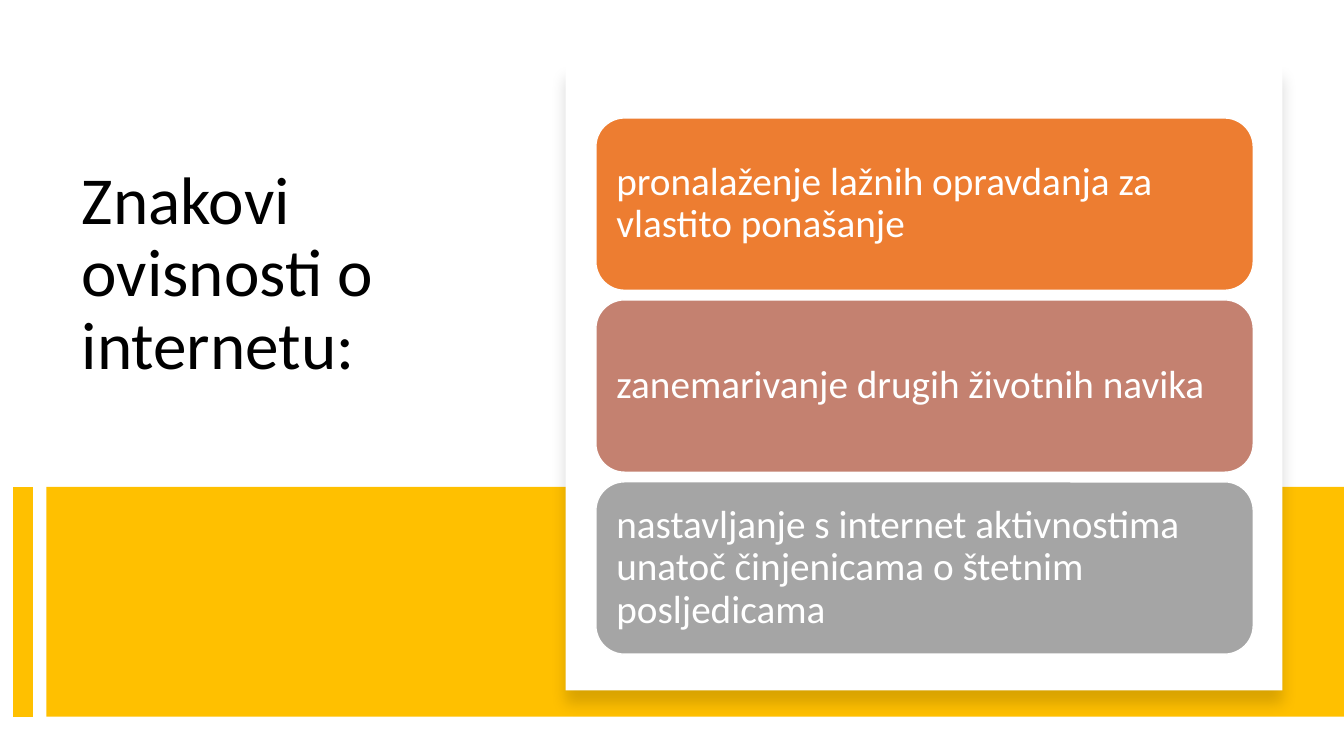
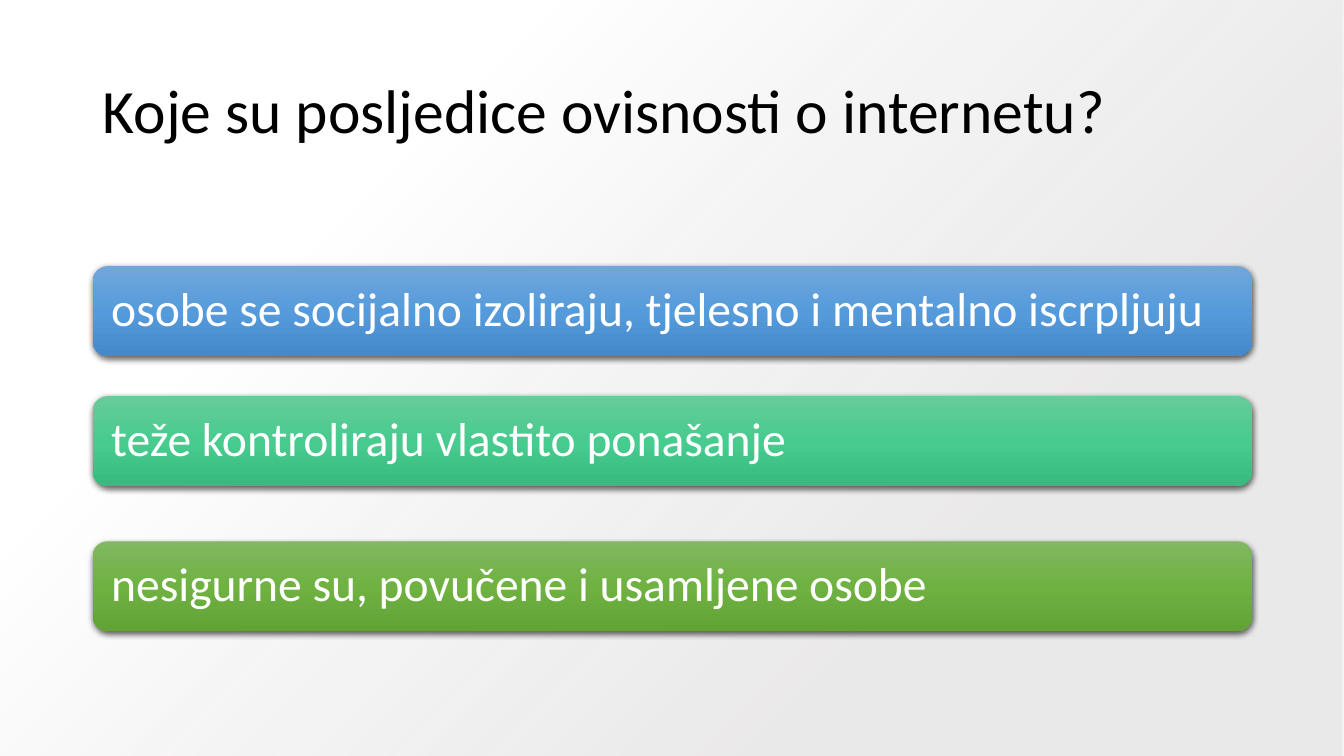
from dataclasses import dataclass

from pptx import Presentation
from pptx import util as u
from pptx.dml.color import RGBColor
from pptx.enum import shapes, text
from pptx.oxml import parse_xml
from pptx.oxml.ns import nsdecls, qn


@dataclass(frozen=True)
class Theme:
    font: str = "Calibri"
    ink: str = "000000"
    white: str = "FFFFFF"
    gold: str = "FFC000"
    mist: str = "E7E6E6"
    tiles: tuple = ("ED7D31", "C48170", "A5A5A5")
    bars: tuple = (
        ("71A6DB", "559BDB", "448ACA"),
        ("67CC9A", "47CB8E", "39BB7F"),
        ("81B861", "6FB242", "62A336"),
    )
    head: int = 48
    title: int = 44
    tile: int = 28
    bar: int = 34


T = Theme()
LEFT, TOP, WIDE, HIGH = 0.92, 2.64, 11.5, 0.89
BOX, ROUND = shapes.MSO_SHAPE.RECTANGLE, shapes.MSO_SHAPE.ROUNDED_RECTANGLE
MID = text.MSO_ANCHOR.MIDDLE


def rgb(code):
    return RGBColor.from_string(code)


def inches(spot):
    return [u.Inches(v) for v in spot]


def write(shape, words, size, color=T.white, inset=(0.1, 0.05), anchor=MID):
    frame = shape.text_frame
    frame.word_wrap = True
    frame.auto_size = text.MSO_AUTO_SIZE.NONE
    frame.vertical_anchor = anchor
    frame.margin_left = frame.margin_right = u.Inches(inset[0])
    frame.margin_top = frame.margin_bottom = u.Inches(inset[1])
    para = frame.paragraphs[0]
    para.alignment = text.PP_ALIGN.LEFT
    para.line_spacing = 0.9
    run = para.add_run()
    run.text = words
    run.font.name = T.font
    run.font.size = u.Pt(size)
    run.font.color.rgb = rgb(color)


def title(slide, words, spot, size, anchor=MID):
    shape = slide.shapes.title
    shape.left, shape.top, shape.width, shape.height = inches(spot)
    write(shape, words, size, color=T.ink, anchor=anchor)


def block(slide, kind, spot, fill, edge=None):
    shape = slide.shapes.add_shape(kind, *inches(spot))
    shape.shadow.inherit = False
    shape.fill.solid()
    shape.fill.fore_color.rgb = rgb(fill)
    if edge:
        shape.line.color.rgb = rgb(edge)
        shape.line.width = u.Pt(1)
    else:
        shape.line.fill.background()
    return shape


def blend(shape, stops, way):
    marks = "".join(
        f'<a:gs pos="{pos * 1000}"><a:srgbClr val="{code}">'
        f'<a:alpha val="{alpha * 1000}"/></a:srgbClr></a:gs>'
        for pos, code, alpha in stops
    )
    grad = parse_xml(
        f'<a:gradFill {nsdecls("a")} rotWithShape="1">'
        f"<a:gsLst>{marks}</a:gsLst>{way}</a:gradFill>"
    )
    props = shape.element.spPr
    props.replace(props.find(qn("a:solidFill")), grad)


def shade(shape, alpha, blur, drop):
    glow = parse_xml(
        f'<a:outerShdw {nsdecls("a")} blurRad="{u.Pt(blur)}" dist="{u.Pt(drop)}" '
        f'dir="5400000" algn="t" rotWithShape="0"><a:srgbClr val="{T.ink}">'
        f'<a:alpha val="{alpha * 1000}"/></a:srgbClr></a:outerShdw>'
    )
    shape.element.spPr.find(qn("a:effectLst")).append(glow)


def stripe(slide, x, top, end):
    line = slide.shapes.add_connector(
        shapes.MSO_CONNECTOR.STRAIGHT, *inches((x, top, x, end))
    )
    line.line.color.rgb = rgb(T.gold)
    line.line.width = u.Pt(14)
    line.element.spPr.append(parse_xml(f'<a:effectLst {nsdecls("a")}/>'))


def wash(slide, size):
    shape = block(slide, BOX, (0, 0, *size), T.white)
    way = '<a:path path="circle"><a:fillToRect l="100000" t="100000"/></a:path>'
    blend(shape, ((28, T.mist, 84), (74, T.white, 100)), way)
    slide.shapes.title.element.addprevious(shape.element)


def tile(slide, row, words):
    spot = (5.91, 1.17 + row * 1.805, 6.52, 1.71)
    shape = block(slide, ROUND, spot, T.tiles[row], edge=T.white)
    write(shape, words, T.tile, inset=(0.12, 0.12))


def bar(slide, top, hues, words):
    shape = block(slide, ROUND, (LEFT, top, WIDE, HIGH), hues[1])
    stops = [(pos, hue, 100) for pos, hue in zip((0, 50, 100), hues)]
    blend(shape, stops, '<a:lin ang="5400000" scaled="0"/>')
    shade(shape, 63, 4.5, 1.5)
    write(shape, words, T.bar, inset=(0.14, 0.14))


def signs(slide):
    title(slide, "Znakovi ovisnosti o internetu:", (0.71, 1.6, 4.15, 2.94),
          T.head, anchor=text.MSO_ANCHOR.TOP)
    block(slide, BOX, (0.46, 4.83, 12.87, 2.28), T.gold)
    stripe(slide, 0.23, 4.83, 7.11)
    card = block(slide, BOX, (5.61, 0.64, 7.11, 6.21), T.white)
    shade(card, 15, 11, 10)
    for row, words in enumerate((
        "pronalaženje lažnih opravdanja za vlastito ponašanje",
        "zanemarivanje drugih životnih navika",
        "nastavljanje s internet aktivnostima unatoč činjenicama o štetnim posljedicama",
    )):
        tile(slide, row, words)


def effects(slide, size):
    wash(slide, size)
    title(slide, "Koje su posljedice ovisnosti o internetu?",
          (LEFT, 0.4, WIDE, 1.45), T.title)
    tops = (TOP, 3.93, 5.37)
    lines = (
        "osobe se socijalno izoliraju, tjelesno i mentalno iscrpljuju",
        "teže kontroliraju vlastito ponašanje",
        "nesigurne su, povučene i usamljene osobe",
    )
    for top, hues, words in zip(tops, T.bars, lines):
        bar(slide, top, hues, words)


def main():
    size = (13.33, 7.5)
    deck = Presentation()
    deck.slide_width, deck.slide_height = inches(size)
    plain = deck.slide_layouts[5]
    signs(deck.slides.add_slide(plain))
    effects(deck.slides.add_slide(plain), size)
    deck.save("out.pptx")


if __name__ == "__main__":
    main()
